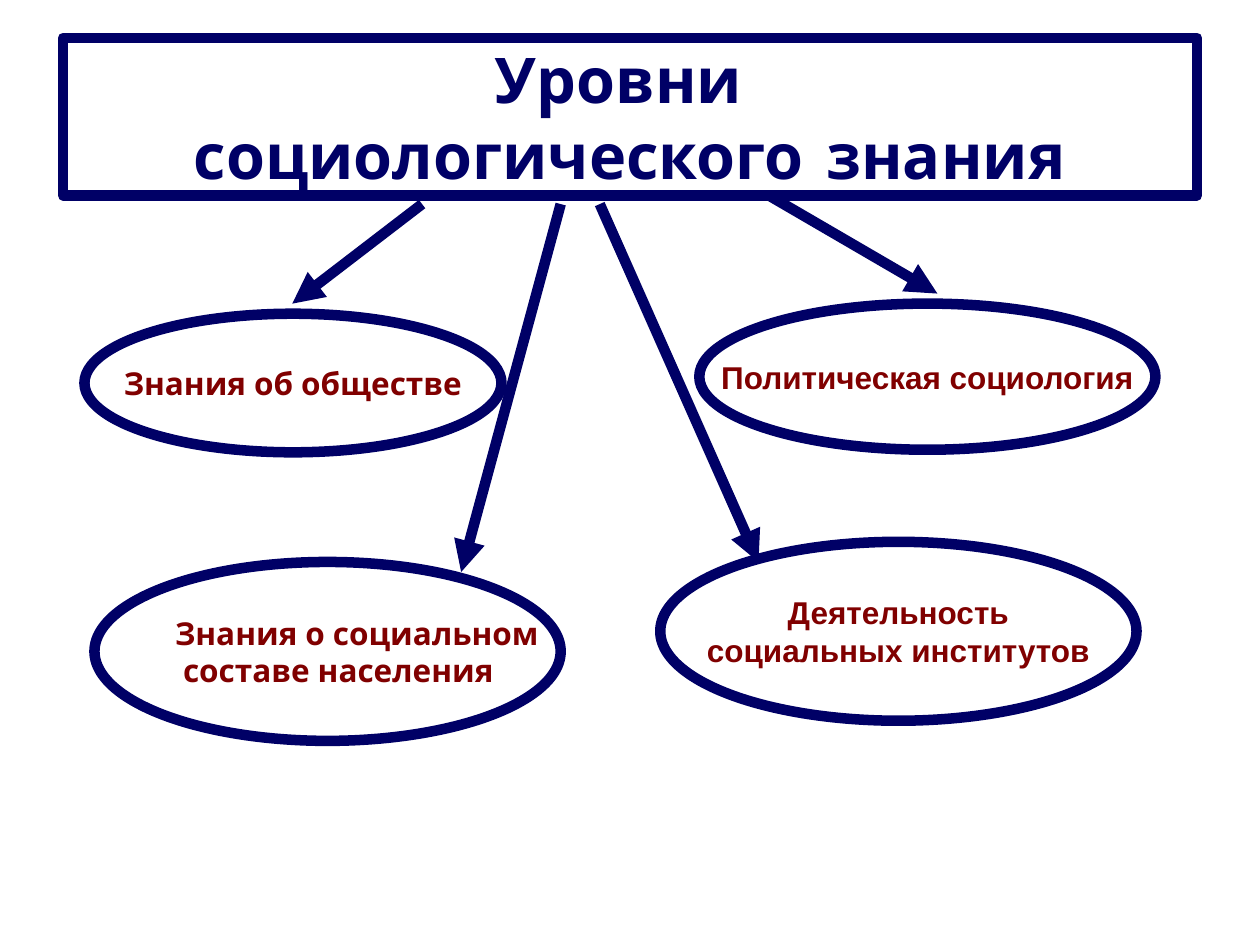
from pptx import Presentation
from pptx import util as u
from pptx.dml.color import RGBColor
from pptx.enum import shapes, text
from pptx.oxml.ns import qn
from lxml import etree

NAVY = RGBColor(0x00, 0x00, 0x66)
MAROON = RGBColor(0x80, 0x00, 0x00)
WHITE = RGBColor(0xFF, 0xFF, 0xFF)

CENTER = text.PP_ALIGN.CENTER
LEFT = text.PP_ALIGN.LEFT

LEVELS = [
    ((0.67, 2.49, 3.31, 1.1), ["Знания об обществе"], "Karla", CENTER),
    ((0.75, 4.46, 3.7, 1.42), ["Знания о социальном", " составе населения"], "Karla", LEFT),
    ((5.55, 2.41, 3.62, 1.16), ["Политическая социология"], "Arial", CENTER),
    ((5.24, 4.3, 3.78, 1.42), ["Деятельность", "социальных институтов"], "Arial", CENTER),
]
ARROWS = [
    ((3.35, 1.62), (2.32, 2.41)),
    ((6.1, 1.55), (7.44, 2.33)),
    ((4.45, 1.62), (3.66, 4.54)),
    ((4.76, 1.62), (6.02, 4.46)),
]


class Diagram:
    title_format = {"name": "Comic Neue", "size": u.Pt(36), "bold": True}
    level_format = {"size": u.Pt(18), "bold": True}
    frame_format = {
        "vertical_anchor": text.MSO_ANCHOR.MIDDLE,
        "auto_size": text.MSO_AUTO_SIZE.NONE,
    }
    line_width = u.Pt(6)

    def __init__(self, page):
        self.page = page

    def apply(self, target, values):
        for name, value in values.items():
            setattr(target, name, value)

    def outline(self, shape):
        shape.line.color.rgb = NAVY
        shape.line.width = self.line_width

    def label(self, shape, lines, font, color, align, wrap):
        frame = shape.text_frame
        self.apply(frame, {**self.frame_format, "word_wrap": wrap})
        frame.text = "\n".join(lines)
        for para in frame.paragraphs:
            para.alignment = align
            for span in para.runs:
                self.apply(span.font, font)
                span.font.color.rgb = color

    def title(self, bounds, content):
        box = self.page.shapes.title
        places = map(u.Inches, bounds)
        self.apply(box, dict(zip(("left", "top", "width", "height"), places)))
        self.outline(box)
        self.label(box, [content], self.title_format, NAVY, CENTER, True)

    def ellipse(self, bounds, lines, font_name, align):
        oval = self.page.shapes.add_shape(shapes.MSO_SHAPE.OVAL, *map(u.Inches, bounds))
        oval.shadow.inherit = False
        oval.fill.solid()
        oval.fill.fore_color.rgb = WHITE
        self.outline(oval)
        font = {**self.level_format, "name": font_name}
        self.label(oval, lines, font, MAROON, align, False)

    def arrow(self, start, end):
        connector = self.page.shapes.add_connector(
            shapes.MSO_CONNECTOR.STRAIGHT, *map(u.Inches, start + end)
        )
        self.outline(connector)
        properties = connector.element.spPr
        etree.SubElement(properties.find(qn("a:ln")), qn("a:tailEnd"), type="triangle")
        etree.SubElement(properties, qn("a:effectLst"))


def main():
    deck = Presentation()
    deck.slide_width, deck.slide_height = u.Inches(10), u.Inches(7.5)
    diagram = Diagram(deck.slides.add_slide(deck.slide_layouts[5]))
    diagram.title((0.5, 0.3, 9, 1.25), "Уровни \vсоциологического знания")
    for level in LEVELS:
        diagram.ellipse(*level)
    for start, end in ARROWS:
        diagram.arrow(start, end)
    deck.save("out.pptx")


if __name__ == "__main__":
    main()
